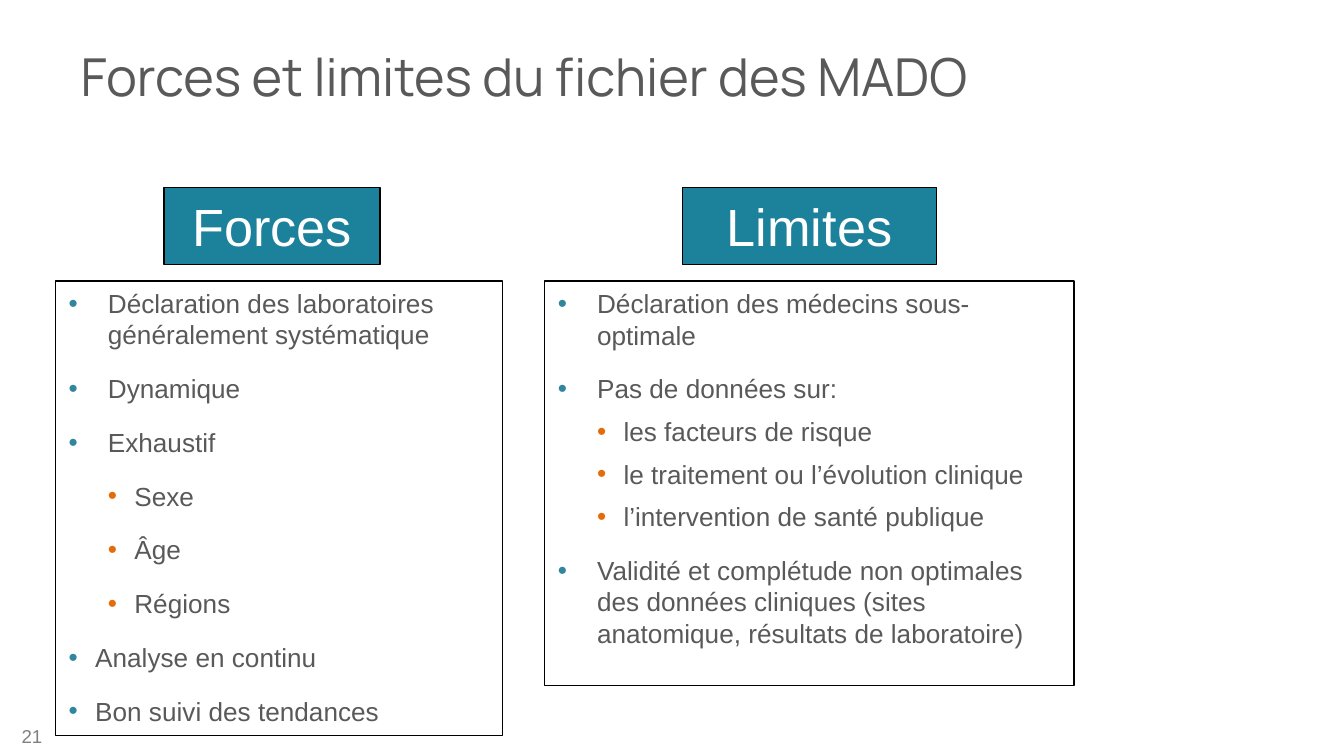
from lxml import etree
from pptx import Presentation
from pptx import util as u
from pptx.dml.color import RGBColor
from pptx.enum import shapes, text
from pptx.oxml import ns

GREY = RGBColor(0x59, 0x59, 0x59)
PALE_GREY = RGBColor(0x80, 0x80, 0x80)
TEAL = RGBColor(0x1C, 0x81, 0x9A)
BULLET_TEAL = RGBColor(0x31, 0x85, 0x9C)
ORANGE = RGBColor(0xE4, 0x6C, 0x0A)
WHITE = RGBColor(0xFF, 0xFF, 0xFF)
BLACK = RGBColor(0, 0, 0)

TITLE = "Forces et limites du fichier des MADO"
PAGE_NUMBER = "21"

STYLES = {
    "main": (0, 0.74, 0.74, BULLET_TEAL),
    "sub": (1, 1.24, 0.5, ORANGE),
    "tight": (0, 0.5, 0.5, BULLET_TEAL),
}
STRENGTHS = [
    ("main", "Déclaration des laboratoires généralement systématique", 0, 12),
    ("main", "Dynamique", 0, 12),
    ("main", "Exhaustif", 0, 12),
    ("sub", "Sexe", 0, 12),
    ("sub", "Âge", 0, 12),
    ("sub", "Régions", 0, 12),
    ("tight", "Analyse en continu", 0, 12),
    ("tight", "Bon suivi des tendances", 0, 12),
]
LIMITS = [
    ("main", "Déclaration des médecins sous-optimale", 0, 12),
    ("main", "Pas de données sur:", 0, 6),
    ("sub", "les facteurs de risque", 0, 6),
    ("sub", "le traitement ou l’évolution clinique", 0, 6),
    ("sub", "l’intervention de santé publique", 0, 6),
    ("main", "Validité et complétude non optimales des données cliniques "
             "(sites anatomique, résultats de laboratoire)", 6, 12),
]
HEADINGS = [("Forces", 3.1, 4.08), ("Limites", 12.9, 4.8)]
HEADING_TOP, HEADING_HEIGHT = 3.55, 1.45
LIST_TOP = 5.31


def place(box, left, top, width, height):
    box.left, box.top = u.Cm(left), u.Cm(top)
    box.width, box.height = u.Cm(width), u.Cm(height)


def add_span(para, words, size, color, font="Arial"):
    span = para.add_run()
    span.text = words
    span.font.size = u.Pt(size)
    span.font.name = font
    span.font.color.rgb = color


def outline(box):
    box.line.color.rgb = BLACK
    box.line.width = u.Pt(0.75)


def add_bullet(para, indent, hanging, color):
    props = para._p.get_or_add_pPr()
    props.set("marL", str(u.Cm(indent)))
    props.set("indent", str(-u.Cm(hanging)))
    tint = etree.SubElement(props, ns.qn("a:buClr"))
    etree.SubElement(tint, ns.qn("a:srgbClr"), val=str(color))
    etree.SubElement(props, ns.qn("a:buFont"), typeface="Arial")
    etree.SubElement(props, ns.qn("a:buChar"), char="•")


def fill_list(box, items):
    outline(box)
    frame = box.text_frame
    frame.word_wrap = True
    frame.auto_size = text.MSO_AUTO_SIZE.NONE
    frame.vertical_anchor = text.MSO_ANCHOR.TOP
    for index, (style, words, before, after) in enumerate(items):
        para = frame.add_paragraph() if index else frame.paragraphs[0]
        level, indent, hanging, color = STYLES[style]
        para.level = level
        add_bullet(para, indent, hanging, color)
        para.line_spacing = 1.0
        para.space_before = u.Pt(before)
        para.space_after = u.Pt(after)
        add_span(para, words, 14, GREY)


deck = Presentation()
deck.slide_width, deck.slide_height = u.Cm(25.4), u.Cm(14.29)
page = deck.slides.add_slide(deck.slide_layouts[1])

title = page.shapes.title
place(title, 1.27, 0.25, 22.86, 2.37)
title.text_frame.vertical_anchor = text.MSO_ANCHOR.MIDDLE
para = title.text_frame.paragraphs[0]
para.alignment = text.PP_ALIGN.LEFT
add_span(para, TITLE, 28, GREY, "Manrope")

limits = page.placeholders[1]
place(limits, 10.29, LIST_TOP, 10.01, 7.65)
limits.fill.solid()
limits.fill.fore_color.rgb = WHITE
fill_list(limits, LIMITS)

number = page.shapes.add_textbox(u.Cm(-0.17), u.Cm(13.54), u.Cm(1.22), u.Cm(0.76))
number.text_frame.word_wrap = True
number.text_frame.vertical_anchor = text.MSO_ANCHOR.MIDDLE
para = number.text_frame.paragraphs[0]
para.alignment = text.PP_ALIGN.RIGHT
add_span(para, PAGE_NUMBER, 10, PALE_GREY)

strengths = page.shapes.add_textbox(u.Cm(1.05), u.Cm(LIST_TOP), u.Cm(8.45), u.Cm(8.59))
fill_list(strengths, STRENGTHS)

for words, left, width in HEADINGS:
    heading = page.shapes.add_shape(
        shapes.MSO_SHAPE.RECTANGLE,
        u.Cm(left), u.Cm(HEADING_TOP), u.Cm(width), u.Cm(HEADING_HEIGHT))
    heading.shadow.inherit = False
    heading.fill.solid()
    heading.fill.fore_color.rgb = TEAL
    outline(heading)
    heading.text_frame.vertical_anchor = text.MSO_ANCHOR.TOP
    para = heading.text_frame.paragraphs[0]
    para.alignment = text.PP_ALIGN.CENTER
    add_span(para, words, 28, WHITE)

deck.save("out.pptx")
